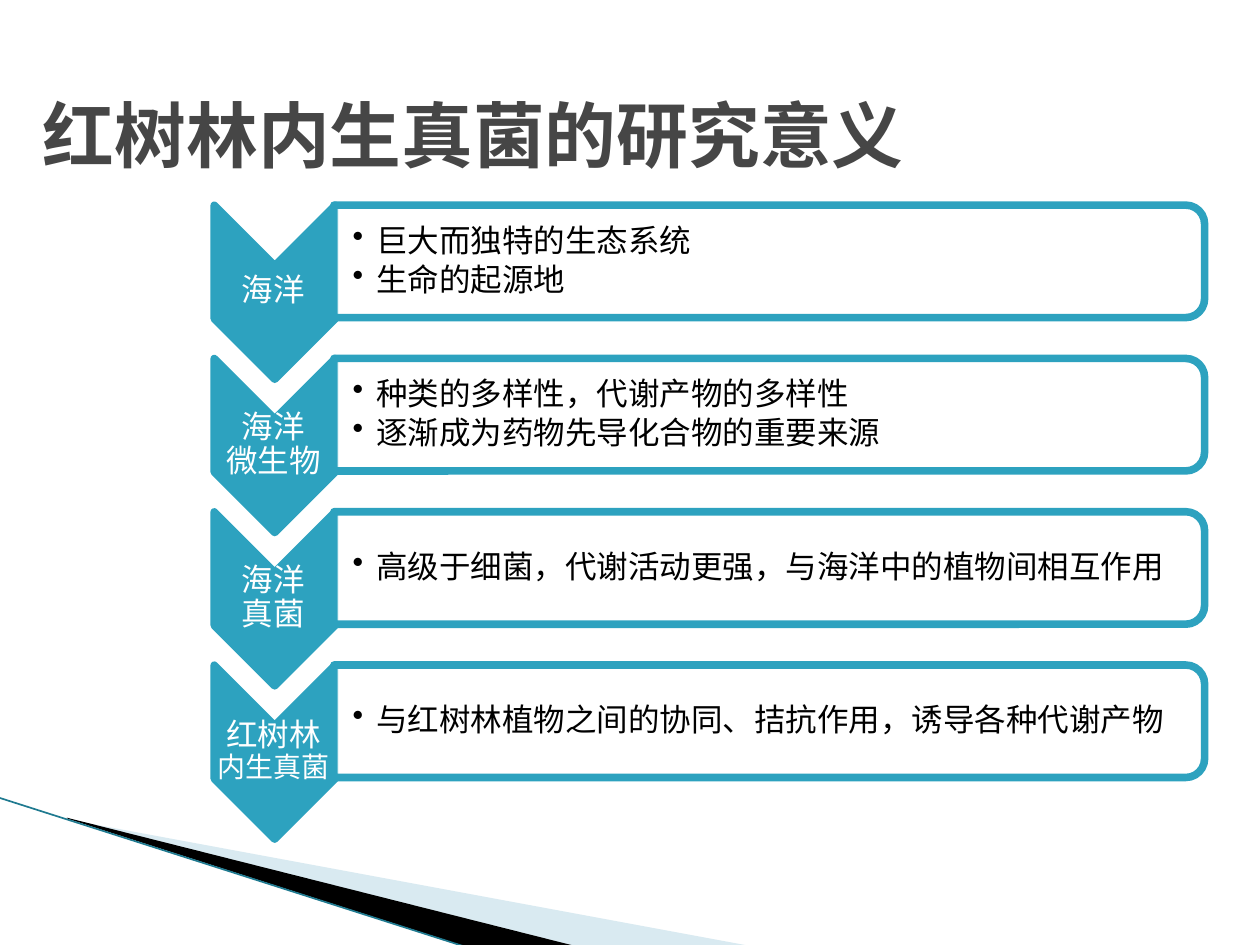
from dataclasses import dataclass

from lxml.etree import SubElement
from pptx import Presentation
from pptx.dml.color import RGBColor
from pptx.enum.shapes import MSO_CONNECTOR, MSO_SHAPE
from pptx.enum.text import MSO_ANCHOR, PP_ALIGN
from pptx.oxml.ns import qn
from pptx.util import Pt

FONT = "Noto Sans Mono"
TEAL = "2DA2BF"
WHITE = "FFFFFF"
BLACK = "000000"
FIRST_CENTER = 149.4
PITCH = 87.6


@dataclass
class Label:
    text: str
    size: float = 18


@dataclass
class Stage:
    labels: list[Label]
    points: list[str]


STAGES = [
    Stage([Label("海洋")], ["巨大而独特的生态系统", "生命的起源地"]),
    Stage([Label("海洋"), Label("微生物")],
          ["种类的多样性，代谢产物的多样性", "逐渐成为药物先导化合物的重要来源"]),
    Stage([Label("海洋"), Label("真菌")],
          ["高级于细菌，代谢活动更强，与海洋中的植物间相互作用"]),
    Stage([Label("红树林"), Label("内生真菌", 16)],
          ["与红树林植物之间的协同、拮抗作用，诱导各种代谢产物"]),
]


def rgb(color: str) -> RGBColor:
    """Turn a hex string into a colour."""
    return RGBColor.from_string(color)


def fill_solid(shape, color: str, opacity: int = 100) -> None:
    """Fill a shape, with opacity in percent."""
    shape.shadow.inherit = False
    shape.fill.solid()
    shape.fill.fore_color.rgb = rgb(color)
    if opacity < 100:
        tint = shape.fill._xPr.find(f".//{qn('a:srgbClr')}")
        SubElement(tint, qn("a:alpha"), val=str(opacity * 1000))


def add_run(paragraph, text: str, size: float, color: str, bold: bool = False) -> None:
    """Append one formatted run."""
    run = paragraph.add_run()
    run.text = text
    run.font.size = Pt(size)
    run.font.bold = bold
    run.font.name = FONT
    run.font.color.rgb = rgb(color)
    SubElement(run._r.get_or_add_rPr(), qn("a:ea"), typeface=FONT)


def add_wedge(slide, corners: list[tuple[float, float]], color: str, opacity: int = 100) -> None:
    """Draw one sliver of the corner decoration."""
    builder = slide.shapes.build_freeform(Pt(corners[0][0]), Pt(corners[0][1]))
    builder.add_line_segments([(Pt(x), Pt(y)) for x, y in corners[1:]], close=True)
    wedge = builder.convert_to_shape()
    fill_solid(wedge, color, opacity)
    wedge.line.fill.background()


def add_decoration(slide) -> None:
    """Draw the slivers and the edge line in the lower left corner."""
    add_wedge(slide, [(39.6, 468.5), (428.4, 540.5), (328.3, 540.5), (39.6, 468)], "A0CBDC", 40)
    add_wedge(slide, [(38.2, 467.3), (329, 540.7), (267.8, 541.4), (38.9, 468)], BLACK)
    edge = slide.shapes.add_connector(
        MSO_CONNECTOR.STRAIGHT, Pt(-0.7), Pt(455.8), Pt(267.1), Pt(541.4))
    edge.line.color.rgb = rgb("1F7A90")
    edge.line.width = Pt(0.95)
    SubElement(edge._element.spPr, qn("a:effectLst"))


def add_turned(slide, preset: MSO_SHAPE, center_x: float, center_y: float,
               width: float, height: float, color: str, opacity: int = 100) -> None:
    """Draw a preset shape turned a quarter, placed by its centre."""
    turned = slide.shapes.add_shape(
        preset, Pt(center_x - width / 2), Pt(center_y - height / 2), Pt(width), Pt(height))
    turned.rotation = 90
    fill_solid(turned, color, opacity)
    turned.line.color.rgb = rgb(TEAL)
    turned.line.width = Pt(4.33)


def add_frame(slide, left: float, center_y: float, width: float, height: float, inset: float):
    """Add a wrapping, vertically centred text frame."""
    frame = slide.shapes.add_textbox(
        Pt(left), Pt(center_y - height / 2), Pt(width), Pt(height)).text_frame
    frame.word_wrap = True
    frame.vertical_anchor = MSO_ANCHOR.MIDDLE
    frame.margin_left = Pt(inset)
    frame.margin_right = frame.margin_top = frame.margin_bottom = Pt(0.7)
    return frame


def add_stage(slide, stage: Stage, center_y: float) -> None:
    """Draw one step: chevron, label, panel and bullets."""
    add_turned(slide, MSO_SHAPE.CHEVRON, 157, center_y + 17.6, 99.4, 69.1, TEAL)
    heading = add_frame(slide, 121.7, center_y + 17.3, 69.1, 29.5, 0.7).paragraphs[0]
    heading.alignment = PP_ALIGN.CENTER
    heading.line_spacing = 0.9
    heading.space_after = Pt(6.3)
    for index, label in enumerate(stage.labels):
        if index:
            heading.add_line_break()
        add_run(heading, label.text, label.size, WHITE)

    add_turned(slide, MSO_SHAPE.ROUND_2_SAME_RECTANGLE, 439.6, center_y, 64.3, 497.5, WHITE, 90)
    details = add_frame(slide, 191.5, center_y, 494.6, 58.3, 10)
    for index, point in enumerate(stage.points):
        bullet = details.add_paragraph() if index else details.paragraphs[0]
        bullet.level = 1
        bullet.line_spacing = 0.9
        bullet.space_after = Pt(2.7)
        properties = bullet._p.get_or_add_pPr()
        properties.set("marL", str(Pt(13.5)))
        properties.set("indent", str(Pt(-13.5)))
        SubElement(properties, qn("a:buChar"), char="•")
        add_run(bullet, point, 18, BLACK)


def add_title(slide, text: str) -> None:
    """Place and format the title."""
    title = slide.shapes.title
    title.left, title.top, title.width, title.height = Pt(0), Pt(31.7), Pt(672.5), Pt(90)
    frame = title.text_frame
    frame.margin_left = Pt(24.5)
    frame.vertical_anchor = MSO_ANCHOR.MIDDLE
    frame.paragraphs[0].alignment = PP_ALIGN.LEFT
    add_run(frame.paragraphs[0], text, 41, "464646", bold=True)


def main() -> None:
    """Build and save the slide."""
    deck = Presentation()
    deck.slide_width, deck.slide_height = Pt(720), Pt(540)
    slide = deck.slides.add_slide(deck.slide_layouts[5])
    add_decoration(slide)
    add_title(slide, "红树林内生真菌的研究意义")
    for index, stage in enumerate(STAGES):
        add_stage(slide, stage, FIRST_CENTER + index * PITCH)
    deck.save("out.pptx")


if __name__ == "__main__":
    main()
